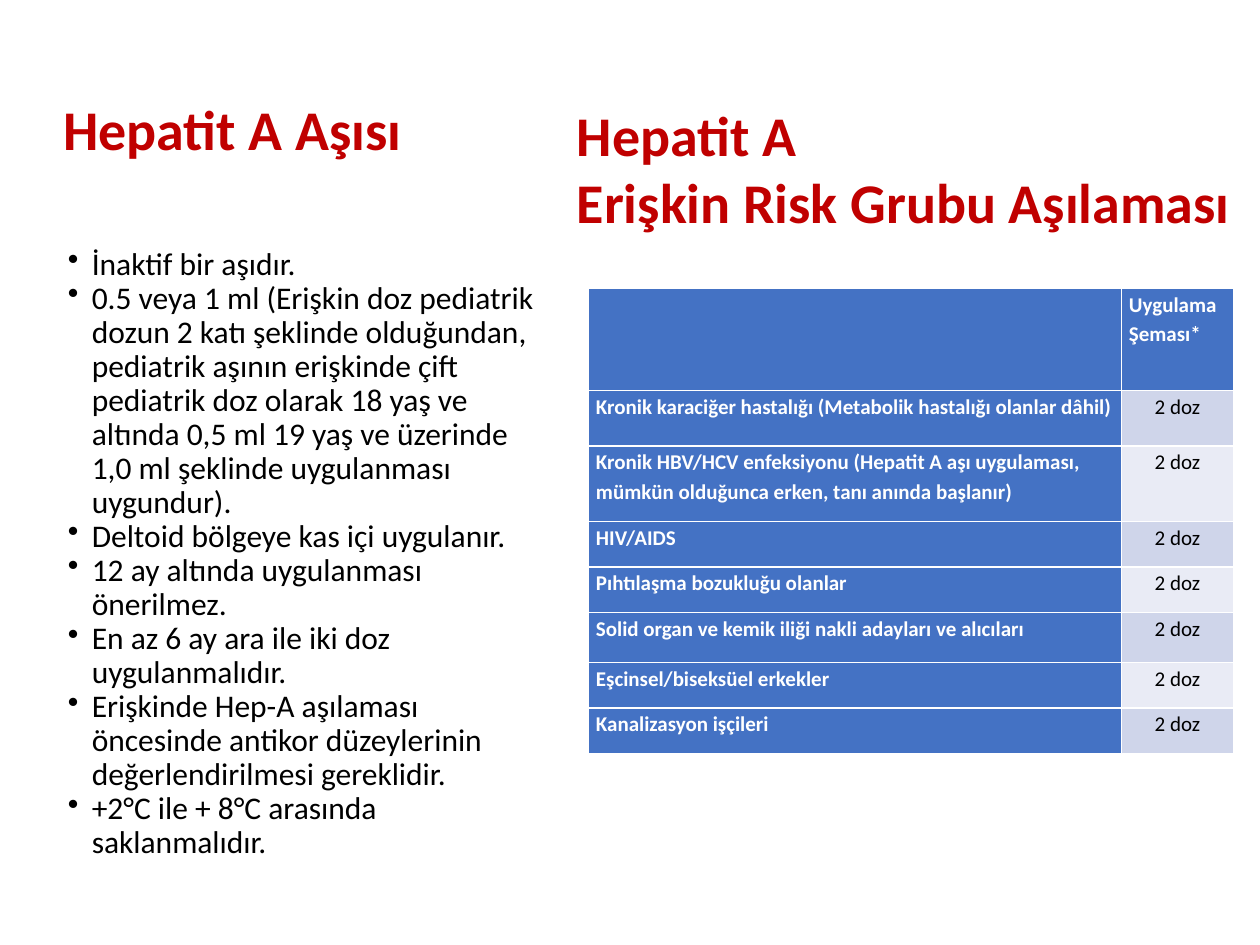
from pptx import Presentation
from pptx.dml.color import RGBColor
from pptx.enum.text import MSO_ANCHOR, PP_ALIGN
from pptx.oxml.xmlchemy import OxmlElement
from pptx.util import Inches, Pt

RED, BLACK, WHITE = "C00000", "000000", "FFFFFF"
BLUE, BANDS = "4472C4", ("CFD5EA", "E9EBF5")

VACCINE_FACTS = [
    "İnaktif bir aşıdır.",
    "0.5 veya 1 ml (Erişkin doz pediatrik dozun 2 katı şeklinde olduğundan, "
    "pediatrik aşının erişkinde çift pediatrik doz olarak 18 yaş ve altında "
    "0,5 ml 19 yaş ve üzerinde 1,0 ml şeklinde uygulanması uygundur).",
    "Deltoid bölgeye kas içi uygulanır.",
    "12 ay altında uygulanması önerilmez.",
    "En az 6 ay ara ile iki doz uygulanmalıdır.",
    "Erişkinde Hep-A aşılaması öncesinde antikor düzeylerinin "
    "değerlendirilmesi gereklidir.",
    "+2°C ile + 8°C arasında saklanmalıdır.",
]
RISK_GROUPS = [
    ("Kronik karaciğer hastalığı (Metabolik hastalığı olanlar dâhil)", 0.44),
    ("Kronik HBV/HCV enfeksiyonu (Hepatit A aşı uygulaması, "
     "mümkün olduğunca erken, tanı anında başlanır)", 0.6),
    ("HIV/AIDS", 0.36),
    ("Pıhtılaşma bozukluğu olanlar", 0.36),
    ("Solid organ ve kemik iliği nakli adayları ve alıcıları", 0.4),
    ("Eşcinsel/biseksüel erkekler", 0.36),
    ("Kanalizasyon işçileri", 0.36),
]


def rgb(color):
    return RGBColor.from_string(color)


def format_paragraph(p, size, color, bold=False, spacing=1.0, align=PP_ALIGN.LEFT):
    p.font.name = "Calibri"
    p.font.size = Pt(size)
    p.font.bold = bold
    p.font.color.rgb = rgb(color)
    p.line_spacing = spacing
    p.space_before = p.space_after = Pt(0)
    p.alignment = align


def add_bullet(p, indent):
    pPr = p._p.get_or_add_pPr()
    pPr.set("marL", str(indent))
    pPr.set("indent", str(-indent))
    bullet = OxmlElement("a:buChar")
    bullet.set("char", "•")
    pPr.insert_element_before(bullet, "a:tabLst", "a:defRPr", "a:extLst")


def set_title(slide, text):
    title = slide.shapes.title
    title.left, title.top = Inches(0.4), Inches(0.25)
    title.width, title.height = Inches(4.04), Inches(1.09)
    tf = title.text_frame
    tf.text = text
    tf.vertical_anchor = MSO_ANCHOR.BOTTOM
    format_paragraph(tf.paragraphs[0], 32, RED, bold=True, spacing=0.9)


def add_text(slide, left, top, width, height, lines, bulleted=False, **style):
    box = slide.shapes.add_textbox(Inches(left), Inches(top), Inches(width), Inches(height))
    tf = box.text_frame
    tf.word_wrap = True
    tf.text = "\n".join(lines)
    for p in tf.paragraphs:
        format_paragraph(p, **style)
        if bulleted:
            add_bullet(p, Inches(0.19))


def fill_cell(cell, text, fill, **style):
    cell.fill.solid()
    cell.fill.fore_color.rgb = rgb(fill)
    cell.margin_left = cell.margin_right = Inches(0.06)
    cell.margin_top = cell.margin_bottom = 0
    cell.text = text
    format_paragraph(cell.text_frame.paragraphs[0], 12, spacing=1.15, **style)


def add_risk_table(slide, left, top):
    widths = (4.23, 0.89)
    heights = [0.81] + [height for _, height in RISK_GROUPS]
    frame = slide.shapes.add_table(len(heights), len(widths), Inches(left), Inches(top),
                                   Inches(sum(widths)), Inches(sum(heights)))
    table = frame.table
    for column, width in zip(table.columns, widths):
        column.width = Inches(width)
    for row, height in zip(table.rows, heights):
        row.height = Inches(height)

    label = {"fill": BLUE, "color": WHITE, "bold": True}
    fill_cell(table.cell(0, 0), "", **label)
    fill_cell(table.cell(0, 1), "Uygulama Şeması*", **label)
    for i, (group, _) in enumerate(RISK_GROUPS):
        fill_cell(table.cell(i + 1, 0), group, **label)
        fill_cell(table.cell(i + 1, 1), "2 doz", fill=BANDS[i % 2], color=BLACK,
                  align=PP_ALIGN.CENTER)


def main():
    prs = Presentation()
    prs.slide_width, prs.slide_height = Inches(10), Inches(7.5)
    slide = prs.slides.add_slide(prs.slide_layouts[5])
    set_title(slide, "Hepatit A Aşısı")
    add_text(slide, 0.44, 1.92, 3.94, 4.92, VACCINE_FACTS, bulleted=True,
             size=18, color=BLACK, spacing=0.9)
    add_risk_table(slide, 4.67, 2.29)
    add_text(slide, 4.48, 0.75, 5.87, 1.72, ["Hepatit A", "Erişkin Risk Grubu Aşılaması"],
             size=32, color=RED, bold=True)
    prs.save("out.pptx")


if __name__ == "__main__":
    main()
